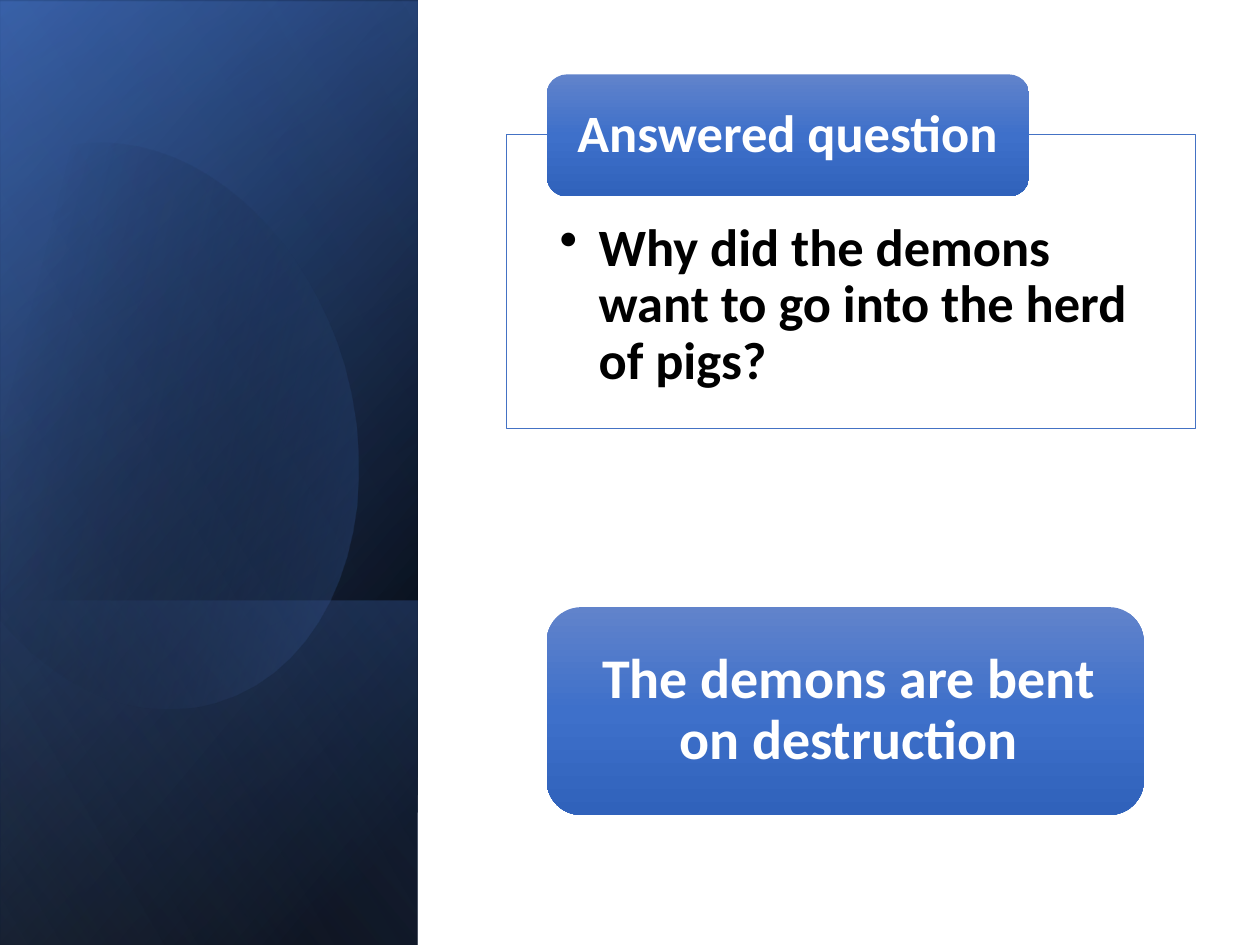
import math

import pptx
import pptx.dml.color
import pptx.enum.shapes
import pptx.enum.text
import pptx.oxml
import pptx.oxml.ns
import pptx.util

Cm, Pt = pptx.util.Cm, pptx.util.Pt
SHAPE = pptx.enum.shapes.MSO_SHAPE
ALIGN = pptx.enum.text.PP_ALIGN
ANCHOR = pptx.enum.text.MSO_ANCHOR

# Gradient stops: position %, colour, opacity %
BUTTON = [(0, "6183CB", 100), (50, "3E70CA", 100), (100, "3062BB", 100)]

# Side panel layers: left, top, width, height (cm, before the turn), stops, angle
PANEL = (-5.31, 5.32, 19.05, 8.41)
LAYERS_BELOW = [
    (PANEL, [(8, "000000", 100), (100, "2F5597", 100)], 50),
    ((-5.31, 5.36, 19.05, 8.41), [(0, "000000", 0), (99, "4472C4", 46)], 30),
    ((0.74, 11.38, 6.96, 8.41), [(2, "4472C4", 29), (100, "000000", 30)], 130),
]
LAYER_ABOVE = (PANEL, [(0, "000000", 0), (99, "8FAADC", 11)], 120)

# Outline of the blob as it appears on the slide: one point is a line, three a curve
BLOB_START = (2.44, 2.9)
BLOB = [
    [(4.34, 3.1), (6.2, 4.88), (6.93, 7.37)],
    [(7.8, 10.46), (6.65, 13.49), (4.34, 14.15)],
    [(2.9, 14.58), (1.35, 13.97), (0.18, 12.7)],
    [(-0.08, 12.4)],
    [(-0.64, 4.22)],
    [(-0.38, 3.91)],
    [(0.05, 3.48), (0.56, 3.18), (1.14, 3)],
    [(1.57, 2.87), (2.01, 2.84), BLOB_START],
]
BLOB_CENTRE = (3.02, 8.5)
BLOB_TURN = 343.9


def rgb(hex_colour):
    return pptx.dml.color.RGBColor.from_string(hex_colour)


def set_gradient(s, stops, angle):
    """Fill with a linear gradient whose stops may be transparent."""
    gs = "".join(
        f'<a:gs pos="{pos * 1000}"><a:srgbClr val="{colour}">'
        f'<a:alpha val="{alpha * 1000}"/></a:srgbClr></a:gs>'
        for pos, colour, alpha in stops)
    new = pptx.oxml.parse_xml(
        f'<a:gradFill {pptx.oxml.ns.nsdecls("a")} rotWithShape="1">'
        f'<a:gsLst>{gs}</a:gsLst>'
        f'<a:lin ang="{angle * 60000}" scaled="0"/></a:gradFill>')
    s.fill.gradient()
    old = s._element.spPr.find(pptx.oxml.ns.qn("a:gradFill"))
    old.getparent().replace(old, new)


def add_box(slide, kind, box):
    s = slide.shapes.add_shape(kind, *map(Cm, box))
    s.shadow.inherit = False
    s.line.fill.background()
    return s


def add_layer(slide, box, stops, angle):
    s = add_box(slide, SHAPE.RECTANGLE, box)
    s._element.spPr.xfrm.set("flipH", "1")
    s.rotation = 90
    set_gradient(s, stops, angle)


def curve_points(start, segments, steps=16):
    points = [start]
    for segment in segments:
        if len(segment) == 1:
            points += segment
            continue
        controls = [points[-1], *segment]
        for i in range(1, steps + 1):
            t = i / steps
            weights = [math.comb(3, k) * t**k * (1 - t)**(3 - k) for k in range(4)]
            points.append(tuple(sum(w * c[axis] for w, c in zip(weights, controls))
                                for axis in (0, 1)))
    return points


def turn(point, centre, degrees):
    a = math.radians(degrees)
    dx, dy = point[0] - centre[0], point[1] - centre[1]
    return (Cm(centre[0] + dx * math.cos(a) - dy * math.sin(a)),
            Cm(centre[1] + dx * math.sin(a) + dy * math.cos(a)))


def add_blob(slide):
    points = [turn(p, BLOB_CENTRE, -BLOB_TURN)
              for p in curve_points(BLOB_START, BLOB)]
    builder = slide.shapes.build_freeform(*points[0])
    builder.add_line_segments(points[1:], close=True)
    s = builder.convert_to_shape()
    s.rotation = BLOB_TURN
    s.shadow.inherit = False
    s.line.fill.background()
    set_gradient(s, [(29, "000000", 0), (100, "4472C4", 43)], 30)


def set_text(s, text, size, colour, insets, anchor, align):
    """Write one bold paragraph; insets are left, top, right, bottom in cm."""
    tf = s.text_frame
    left, top, right, bottom = map(Cm, insets)
    frame = {"word_wrap": True, "vertical_anchor": anchor, "margin_left": left,
             "margin_top": top, "margin_right": right, "margin_bottom": bottom}
    for name, value in frame.items():
        setattr(tf, name, value)
    p = tf.paragraphs[0]
    p.alignment = align
    p.line_spacing = 0.9
    r = p.add_run()
    r.text = text
    for name, value in {"name": "Calibri", "size": Pt(size), "bold": True}.items():
        setattr(r.font, name, value)
    r.font.color.rgb = rgb(colour)
    return p


def add_bullet(p, indent):
    pPr = p._p.get_or_add_pPr()
    pPr.set("marL", str(Cm(indent)))
    pPr.set("indent", str(-Cm(indent)))
    pPr.append(pptx.oxml.parse_xml(
        f'<a:buChar {pptx.oxml.ns.nsdecls("a")} char="•"/>'))


def add_question_frame(slide, box, text):
    s = add_box(slide, SHAPE.RECTANGLE, box)
    s.fill.solid()
    s.fill.fore_color.rgb = rgb("FFFFFF")
    s.line.color.rgb = rgb("4472C4")
    s.line.width = Pt(0.5)
    p = set_text(s, text, 30, "000000", (1.07, 1.73, 1.07, 0.58),
                 ANCHOR.TOP, ALIGN.LEFT)
    add_bullet(p, 0.79)


def add_button(slide, box, text, size, align):
    s = add_box(slide, SHAPE.ROUNDED_RECTANGLE, box)
    set_gradient(s, BUTTON, 90)
    set_text(s, text, size, "FFFFFF", (0.5, 0, 0.36, 0), ANCHOR.MIDDLE, align)


def main():
    prs = pptx.Presentation()
    prs.slide_width, prs.slide_height = Cm(25.4), Cm(19.05)
    slide = prs.slides.add_slide(prs.slide_layouts[6])

    for layer in LAYERS_BELOW:
        add_layer(slide, *layer)
    add_blob(slide)
    add_layer(slide, *LAYER_ABOVE)

    add_question_frame(slide, (10.21, 2.72, 13.89, 5.92),
                       "Why did the demons want to go into the herd of pigs?")
    add_button(slide, (11.02, 1.5, 9.73, 2.46), "Answered question", 30, ALIGN.LEFT)
    add_button(slide, (11.02, 12.24, 12.04, 4.19),
               "The demons are bent on destruction", 32, ALIGN.CENTER)
    prs.save("out.pptx")


if __name__ == "__main__":
    main()
